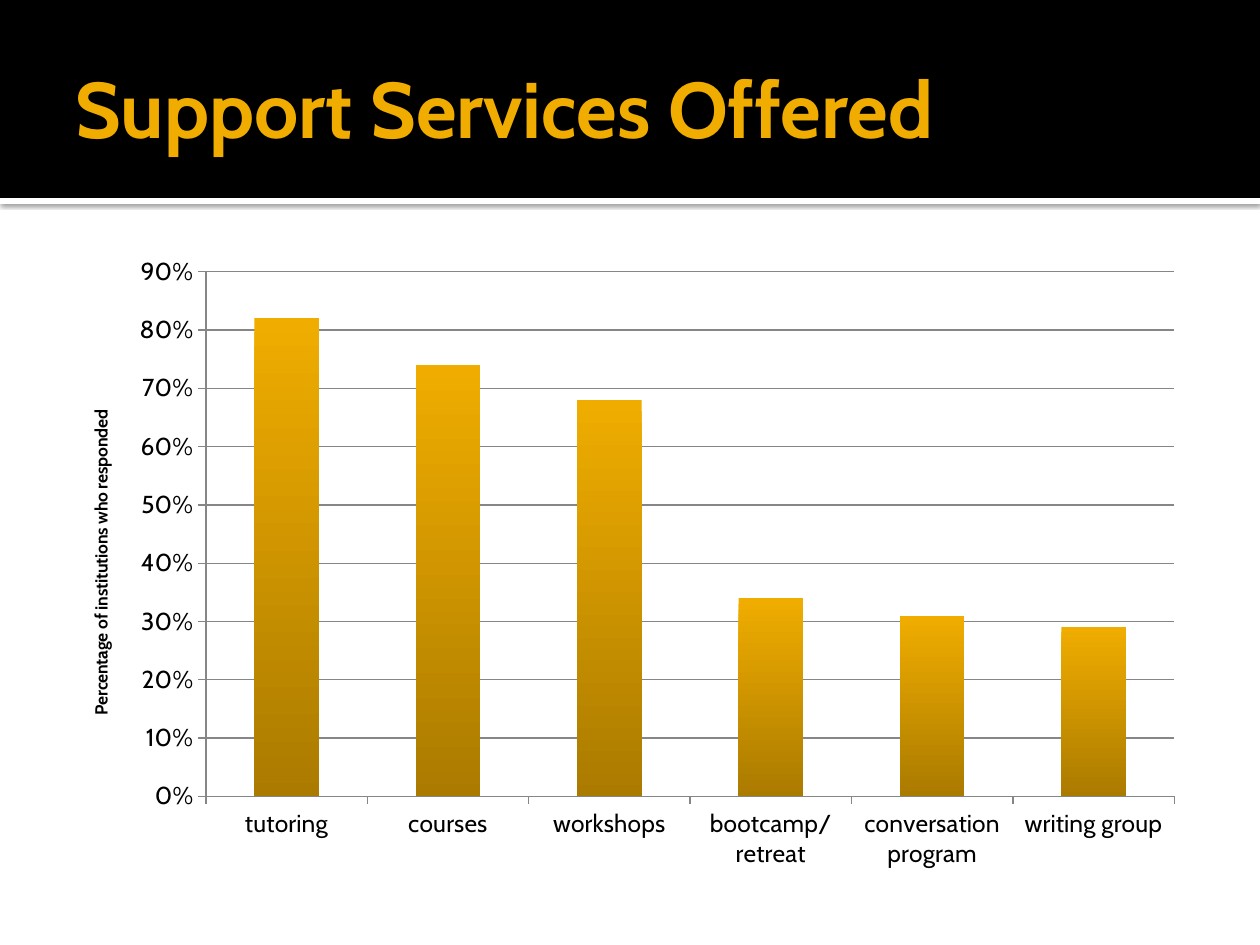
from lxml import etree
from pptx import Presentation
from pptx import util as u
from pptx.chart.data import CategoryChartData
from pptx.dml.color import RGBColor
from pptx.enum import chart as charts, shapes, text
from pptx.oxml import ns

PX = 914400 / 126
FONT = "Cabin"
BLACK = RGBColor(0x00, 0x00, 0x00)
WHITE = RGBColor(0xFF, 0xFF, 0xFF)
GOLD = RGBColor(0xF0, 0xAD, 0x00)
DARK_GOLD = RGBColor(0xAB, 0x7B, 0x00)
GREY = RGBColor(0x86, 0x86, 0x86)

SERVICES = {
    "tutoring": 0.82,
    "courses": 0.74,
    "workshops": 0.68,
    "bootcamp/retreat": 0.34,
    "conversation program": 0.31,
    "writing group": 0.29,
}


def px(length):
    return u.Emu(round(length * PX))


def set_font(font, size, color, bold=False):
    font.name = FONT
    font.size = u.Pt(size)
    font.color.rgb = color
    font.bold = bold


def add_band(slide, top, height, color):
    band = slide.shapes.add_shape(
        shapes.MSO_SHAPE.RECTANGLE, px(0), px(top), px(1260), px(height))
    band.fill.solid()
    band.fill.fore_color.rgb = color
    band.line.fill.background()
    band.shadow.inherit = False
    return band


def add_shadow(shape):
    """Put a soft shadow just below the shape."""
    effects = shape.element.spPr.find(ns.qn("a:effectLst"))
    shadow = etree.SubElement(
        effects, ns.qn("a:outerShdw"), blurRad=str(u.Pt(2.5)),
        dist=str(u.Pt(0.8)), dir="5400000", algn="tl", rotWithShape="0")
    color = etree.SubElement(shadow, ns.qn("a:srgbClr"), val=str(BLACK))
    etree.SubElement(color, ns.qn("a:alpha"), val="60000")


def format_title(slide, wording):
    title = slide.shapes.title
    title.left, title.top, title.width, title.height = map(px, (63, 21, 1134, 173))
    frame = title.text_frame
    frame.text = wording
    frame.word_wrap = True
    frame.auto_size = text.MSO_AUTO_SIZE.NONE
    frame.vertical_anchor = text.MSO_ANCHOR.MIDDLE
    frame.margin_left = u.Inches(0.1)
    frame.margin_right = frame.margin_top = frame.margin_bottom = u.Inches(0.05)
    paragraph = frame.paragraphs[0]
    paragraph.alignment = text.PP_ALIGN.LEFT
    set_font(paragraph.runs[0].font, 45, GOLD, bold=True)
    # The title belongs in front of the bands.
    title.element.getparent().append(title.element)


def format_axis(axis):
    axis.major_tick_mark = charts.XL_TICK_MARK.OUTSIDE
    axis.minor_tick_mark = charts.XL_TICK_MARK.NONE
    axis.format.line.color.rgb = GREY
    axis.format.line.width = u.Pt(0.75)
    set_font(axis.tick_labels.font, 14, BLACK)


def format_value_axis(axis):
    format_axis(axis)
    axis.minimum_scale, axis.maximum_scale, axis.major_unit = 0, 0.9, 0.1
    axis.tick_labels.number_format = "0%"
    axis.tick_labels.number_format_is_linked = False
    axis.has_major_gridlines = True
    axis.major_gridlines.format.line.color.rgb = GREY
    axis.major_gridlines.format.line.width = u.Pt(0.75)
    frame = axis.axis_title.text_frame
    frame.text = "Percentage of institutions who responded"
    set_font(frame.paragraphs[0].runs[0].font, 10, BLACK, bold=True)


def add_services_chart(slide):
    data = CategoryChartData(number_format="0%")
    data.categories = list(SERVICES)
    data.add_series("Series 1", list(SERVICES.values()))
    chart = slide.shapes.add_chart(
        charts.XL_CHART_TYPE.COLUMN_CLUSTERED,
        px(63), px(244), px(1134), px(638), data).chart
    chart.has_title = False
    chart.has_legend = False
    set_font(chart.font, 10, BLACK)
    format_axis(chart.category_axis)
    format_value_axis(chart.value_axis)

    plot = chart.plots[0]
    plot.gap_width = 150
    plot.vary_by_categories = False
    fill = plot.series[0].format.fill
    fill.gradient()
    fill.gradient_angle = 270
    for stop, color in zip(fill.gradient_stops, (GOLD, DARK_GOLD)):
        stop.color.rgb = color


def main():
    presentation = Presentation()
    presentation.slide_width, presentation.slide_height = px(1260), px(945)
    slide = presentation.slides.add_slide(presentation.slide_layouts[5])
    add_shadow(add_band(slide, 198, 6, WHITE))
    add_band(slide, 0, 198, BLACK)
    format_title(slide, "Support Services Offered")
    add_services_chart(slide)
    presentation.save("out.pptx")


if __name__ == "__main__":
    main()
